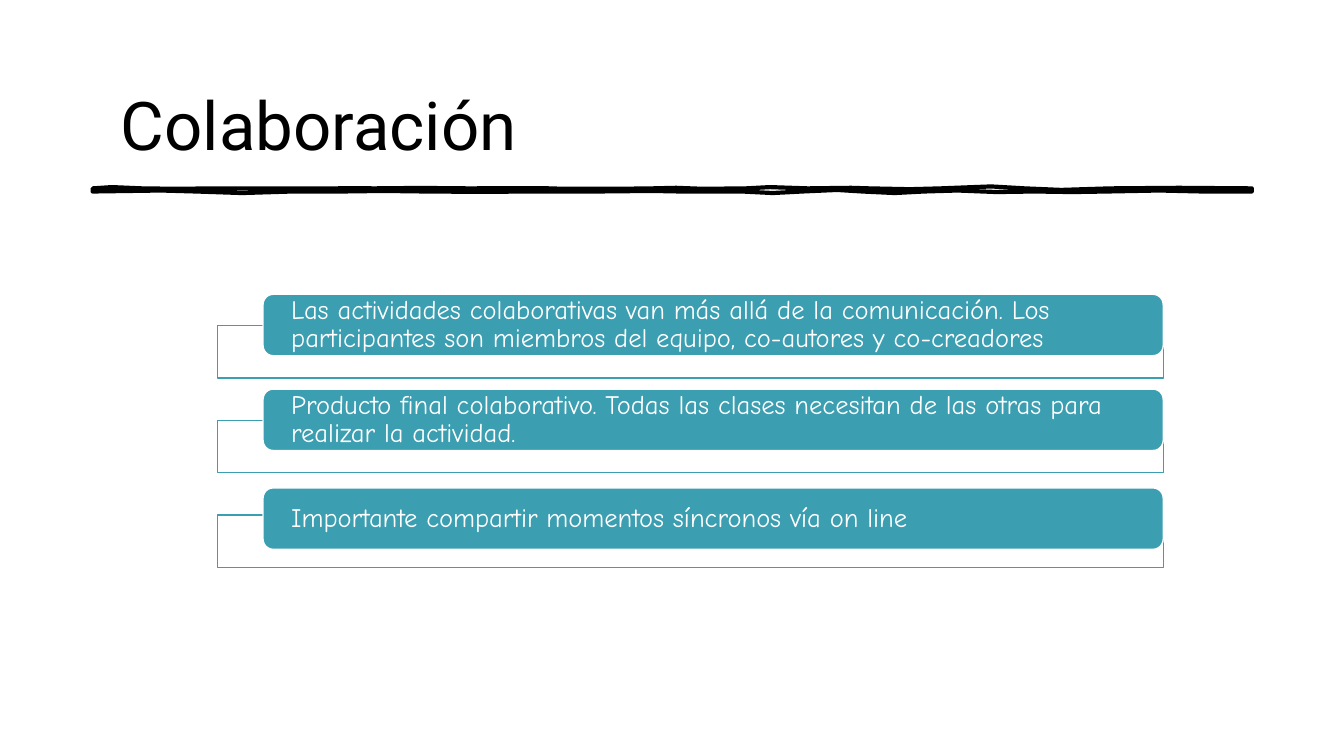
from dataclasses import dataclass

from pptx import Presentation
from pptx.dml.color import RGBColor
from pptx.enum.shapes import MSO_SHAPE
from pptx.enum.text import MSO_ANCHOR, MSO_AUTO_SIZE, PP_ALIGN
from pptx.util import Pt

TITLE = "Colaboración"
POINTS = [
    ("Las actividades colaborativas van más allá de la comunicación. Los participantes "
     "son miembros del equipo, co-autores y co-creadores", 210.2),
    ("Producto final colaborativo. Todas las clases necesitan de las otras para "
     "realizar la actividad.", 277.9),
    ("Importante compartir momentos síncronos vía on line", 348.5),
]
UPPER_EDGE = [
    (66.2, 0), (80, -0.9), (101.5, 0), (127, 0.3), (152.6, 0), (213, 0), (240, 0),
    (253, -0.2), (267, 0), (300, -0.3), (335, 0), (386, -0.2), (403, 0.3), (440, 0.3),
    (466, 0), (483, -0.4), (502, 0.3), (533, 0), (550, -0.9), (577, 0), (608, -0.4),
    (621, 0), (650, 0.6), (672, 0), (708, -1.4), (732, 0), (758, 1.1), (793, 0),
    (842, -0.4), (894.2, 0),
]
LOWER_EDGE = [
    (894.2, 2.2), (859, 2.2), (828, 1.5), (791, 2.2), (766, 2.6), (739, 2.2),
    (712, 2.6), (684, 1.5), (660, 2.2), (639, 3.3), (616, 2.2), (598, 1.1),
    (573, 2.2), (552, 3.3), (530, 2.2), (486, 2.2), (466, 1.8), (426, 2.2),
    (374, 2.2), (348, 2.5), (304, 2.2), (274, 1.8), (244, 2.2), (209, 2.2),
    (173, 3.3), (140, 2.2), (115, 1.5), (66.2, 2.2),
]
RULE_TOP = 134.6
FRAME_LEFT, FRAME_TOP, FRAME_WIDTH, FRAME_HEIGHT = 155.5, 232.6, 675.4, 37.4
FRAME_PITCH = 67.7
BAR_LEFT, BAR_WIDTH, BAR_HEIGHT = 187.9, 643, 43.9


@dataclass(frozen=True)
class Theme:
    ink: RGBColor = RGBColor(0, 0, 0)
    paper: RGBColor = RGBColor(255, 255, 255)
    accent: RGBColor = RGBColor(0x3B, 0x9E, 0xB1)
    title_font: str = "Roboto"
    body_font: str = "Comic Neue"
    title_size: int = 48
    body_size: int = 19


THEME = Theme()


def format_text(text_frame, font_name, size, color):
    text_frame.word_wrap = True
    text_frame.auto_size = MSO_AUTO_SIZE.NONE
    text_frame.vertical_anchor = MSO_ANCHOR.MIDDLE
    paragraph = text_frame.paragraphs[0]
    paragraph.alignment = PP_ALIGN.LEFT
    font = paragraph.runs[0].font
    font.name, font.size, font.color.rgb = font_name, Pt(size), color


def add_box(slide, kind, left, top, width, height, fill, line):
    shape = slide.shapes.add_shape(kind, Pt(left), Pt(top), Pt(width), Pt(height))
    shape.shadow.inherit = False
    shape.fill.solid()
    shape.fill.fore_color.rgb = fill
    shape.line.color.rgb = line
    shape.line.width = Pt(1)
    return shape


def add_title(slide):
    title = slide.shapes.title
    title.left, title.top, title.width, title.height = Pt(79.2), Pt(36), Pt(828), Pt(104.4)
    title.text_frame.text = TITLE
    format_text(title.text_frame, THEME.title_font, THEME.title_size, THEME.ink)


def add_rule(slide):
    outline = [(Pt(x), Pt(RULE_TOP + y)) for x, y in UPPER_EDGE + LOWER_EDGE]
    builder = slide.shapes.build_freeform(*outline[0])
    builder.add_line_segments(outline[1:], close=True)
    rule = builder.convert_to_shape()
    rule.shadow.inherit = False
    rule.fill.background()
    rule.line.color.rgb = THEME.ink
    rule.line.width = Pt(3)


def add_point(slide, index, text, bar_top):
    add_box(slide, MSO_SHAPE.RECTANGLE, FRAME_LEFT, FRAME_TOP + index * FRAME_PITCH,
            FRAME_WIDTH, FRAME_HEIGHT, THEME.paper, THEME.accent)
    bar = add_box(slide, MSO_SHAPE.ROUNDED_RECTANGLE, BAR_LEFT, bar_top,
                  BAR_WIDTH, BAR_HEIGHT, THEME.accent, THEME.paper)
    text_frame = bar.text_frame
    text_frame.text = text
    text_frame.margin_left = text_frame.margin_right = Pt(18)
    text_frame.margin_top = text_frame.margin_bottom = Pt(0)
    text_frame.paragraphs[0].line_spacing = 0.9
    format_text(text_frame, THEME.body_font, THEME.body_size, THEME.paper)


def main():
    presentation = Presentation()
    presentation.slide_width, presentation.slide_height = Pt(960), Pt(540)
    slide = presentation.slides.add_slide(presentation.slide_layouts[5])
    add_rule(slide)
    add_title(slide)
    for index, (text, bar_top) in enumerate(POINTS):
        add_point(slide, index, text, bar_top)
    presentation.save("out.pptx")


if __name__ == "__main__":
    main()
